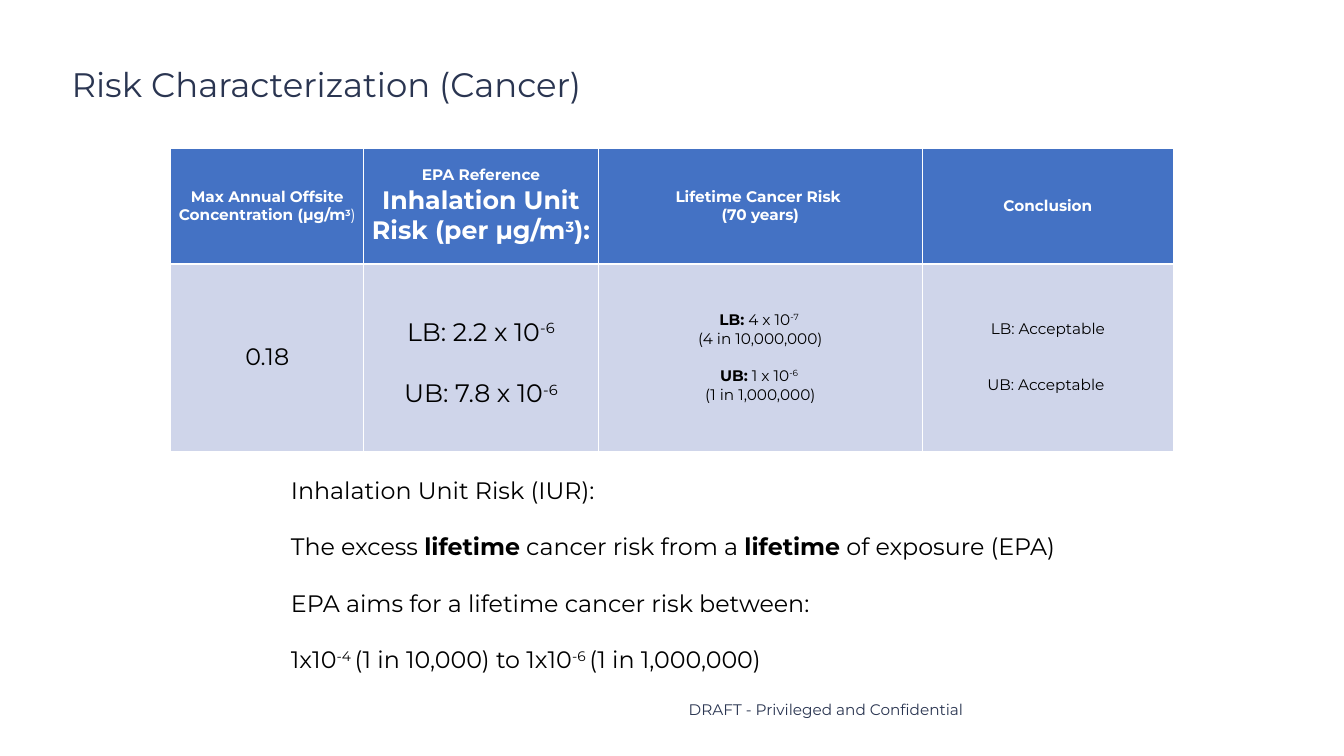
from lxml import etree
from pptx import Presentation
from pptx.dml import color
from pptx.enum import text
from pptx.oxml import ns
from pptx.util import Cm, Pt

FONT = "Montserrat"
NAVY, BLUE, PALE, WHITE, BLACK = "2A3551", "4472C4", "CFD5EA", "FFFFFF", "000000"
LEFT, CENTER = text.PP_ALIGN.LEFT, text.PP_ALIGN.CENTER

HEADERS = [
    [(18, 0, [("Max Annual Offsite Concentration (µg/m", "b"), ("3", "b^"), (")", "")])],
    [(18, 0, [("EPA Reference", "b")]),
     (29.7, 0, [("Inhalation Unit Risk (per µg/m", "b"), ("3", "b^"), ("):", "b")])],
    [(18, 0, [("Lifetime Cancer Risk ", "b")]), (18, 0, [("(70 years)", "b")])],
    [(18, 0, [("Conclusion", "b")])],
]
VALUES = [
    [(28, 0, [("0.18", "")])],
    [(29.7, 0, [("LB: 2.2 x 10", ""), ("-6", "^")]),
     (29.7, 36, [("UB: 7.8 x 10", ""), ("-6", "^")])],
    [(18, 0, [("LB:", "b"), (" 4 x 10", ""), ("-7 ", "^")]),
     (18, 0, [("(4 in 10,000,000)", "")]),
     (18, 22, [("UB:", "b"), (" 1 x 10", ""), ("-6 ", "^")]),
     (18, 0, [("(1 in 1,000,000)", "")])],
    [(18, 0, [("LB: Acceptable", "")]), (18, 44, [("UB: Acceptable ", "")])],
]
NOTES = [
    (28, 0, [("Inhalation Unit Risk (IUR):", "")]),
    (28, 33, [("The excess ", ""), ("lifetime", "b"), (" cancer risk from a ", ""),
              ("lifetime", "b"), (" of exposure (EPA)", "")]),
    (28, 33, [("EPA aims for a lifetime cancer risk between:", "")]),
    (28, 33, [("1x10", ""), ("-4 ", "^"), ("(1 in 10,000) to 1x10", ""),
              ("-6 ", "^"), ("(1 in 1,000,000)", "")]),
]


def rgb(value):
    """Turn a hex string into a colour."""
    return color.RGBColor.from_string(value)


def write(tf, paragraphs, ink, align):
    """Write paragraphs of (size, gap before, runs); b is bold, ^ is superscript."""
    for i, (size, gap, runs) in enumerate(paragraphs):
        p = tf.add_paragraph() if i else tf.paragraphs[0]
        p.alignment = align
        p.space_before = Pt(gap)
        for words, style in runs:
            r = p.add_run()
            r.text = words
            r.font.name, r.font.size = FONT, Pt(size)
            r.font.bold = "b" in style
            r.font.color.rgb = rgb(ink)
            if "^" in style:
                r.font.superscript = True if hasattr(r.font, "superscript") else None
                r._r.get_or_add_rPr().set("baseline", "30000")


def add_borders(cell, **widths):
    """Draw white cell borders with the given side widths in points."""
    tcPr = cell._tc.get_or_add_tcPr()
    for side, width in widths.items():
        ln = etree.SubElement(tcPr, ns.qn(f"a:ln{side}"), w=str(Pt(width)))
        fill = etree.SubElement(ln, ns.qn("a:solidFill"))
        etree.SubElement(fill, ns.qn("a:srgbClr"), val=WHITE)


def add_title(s, x, y, w, h):
    """Place the slide title."""
    title = s.shapes.title
    title.left, title.top, title.width, title.height = x, y, w, h
    tf = title.text_frame
    tf.auto_size = text.MSO_AUTO_SIZE.NONE
    tf.vertical_anchor = text.MSO_ANCHOR.TOP
    write(tf, [(40, 0, [("Risk Characterization (Cancer)", "")])], NAVY, LEFT)


def add_risk_table(s, x, y, widths, heights):
    """Place the cancer risk table."""
    table = s.shapes.add_table(2, len(widths), x, y, sum(widths), sum(heights)).table
    for column, width in zip(table.columns, widths):
        column.width = width
    rows = [(HEADERS, BLUE, WHITE, 1, 3), (VALUES, PALE, BLACK, 3, 1)]
    for i, (contents, fill, ink, top, bottom) in enumerate(rows):
        table.rows[i].height = heights[i]
        for j, paragraphs in enumerate(contents):
            cell = table.cell(i, j)
            add_borders(cell, L=1, R=1, T=top, B=bottom)
            cell.fill.solid()
            cell.fill.fore_color.rgb = rgb(fill)
            cell.vertical_anchor = text.MSO_ANCHOR.MIDDLE
            write(cell.text_frame, paragraphs, ink, CENTER)
    table.cell(1, 1).margin_top = Cm(0.58)


def add_text(s, x, y, w, h, paragraphs, ink, align, anchor):
    """Place a wrapped text box."""
    tf = s.shapes.add_textbox(x, y, w, h).text_frame
    tf.word_wrap = True
    tf.vertical_anchor = anchor
    write(tf, paragraphs, ink, align)


def main():
    """Build the slide and save it."""
    prs = Presentation()
    prs.slide_width, prs.slide_height = Cm(55.85), Cm(31.42)
    s = prs.slides.add_slide(prs.slide_layouts[5])
    add_title(s, Cm(2.72), Cm(2.51), Cm(50.39), Cm(3.81))
    add_risk_table(s, Cm(7.09), Cm(6.17),
                   [Cm(8.03), Cm(9.73), Cm(13.49), Cm(10.41)], [Cm(4.8), Cm(7.77)])
    add_text(s, Cm(11.84), Cm(19.63), Cm(40.44), Cm(11.75), NOTES, BLACK, LEFT,
             text.MSO_ANCHOR.TOP)
    footer = [(18, 0, [("DRAFT - Privileged and Confidential", "")])]
    add_text(s, Cm(24.33), Cm(28.98), Cm(19.99), Cm(1), footer, NAVY, CENTER,
             text.MSO_ANCHOR.MIDDLE)
    prs.save("out.pptx")


if __name__ == "__main__":
    main()
